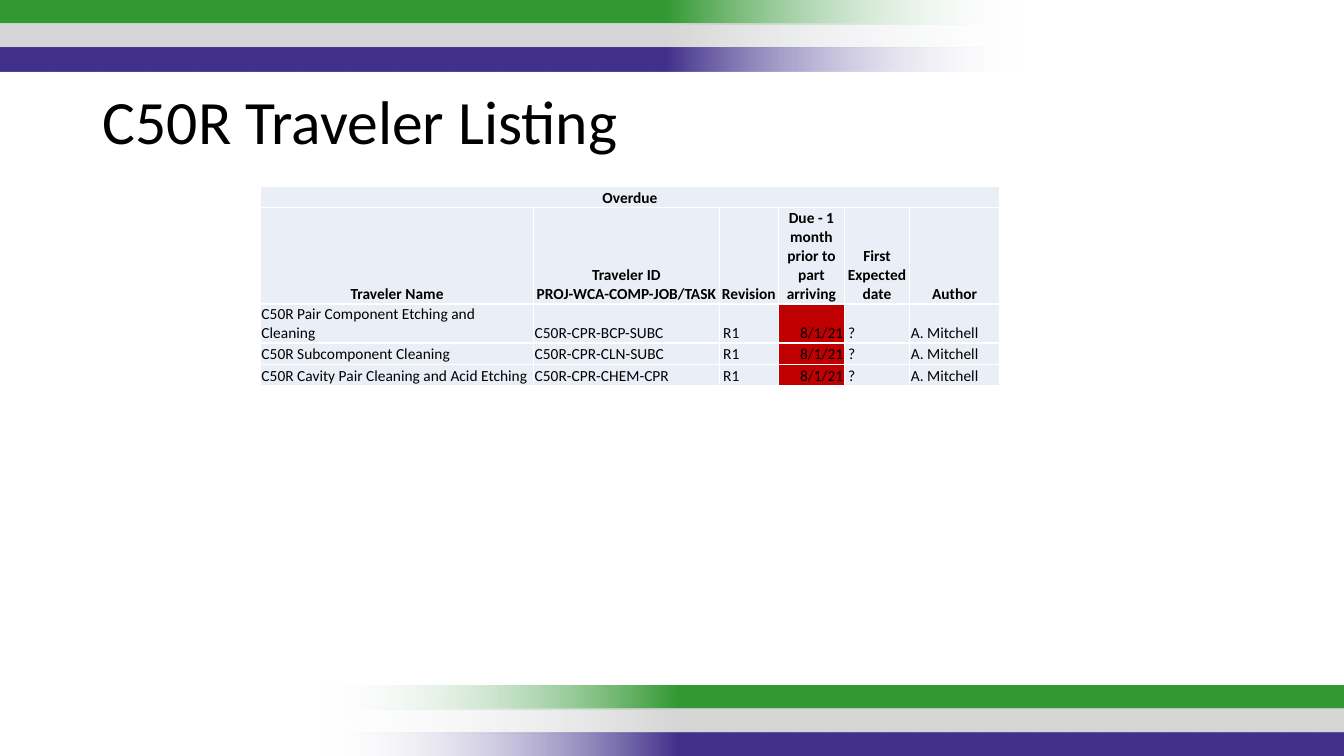
from lxml import etree
from pptx import Presentation
from pptx import util as u
from pptx.dml.color import RGBColor
from pptx.enum import shapes, text
from pptx.oxml import ns

GREEN = RGBColor(0x33, 0x99, 0x33)
GRAY = RGBColor(0xD6, 0xD6, 0xD6)
PURPLE = RGBColor(0x42, 0x31, 0x8C)
PALE = RGBColor(0xF7, 0xFA, 0xFD)
BAND = RGBColor(0xEA, 0xEF, 0xF7)
RED = RGBColor(0xC0, 0x00, 0x00)
WHITE = RGBColor(0xFF, 0xFF, 0xFF)
BLACK = RGBColor(0x00, 0x00, 0x00)

LEFT, MID, RIGHT = text.PP_ALIGN.LEFT, text.PP_ALIGN.CENTER, text.PP_ALIGN.RIGHT
WIDTHS = [20.33, 13.8, 4.43, 4.88, 4.88, 6.68]
ALIGNS = [LEFT, LEFT, LEFT, RIGHT, LEFT, LEFT]
INSETS = [0.01, 0.01, 0.04, 0.01, 0.04, 0.01]
DUE = 3
HEADS = ["Traveler Name", "Traveler ID\vPROJ-WCA-COMP-JOB/TASK", "Revision",
         "Due - 1 month prior to part arriving", "First Expected date", "Author"]
JOBS = [("C50R Pair Component Etching and Cleaning", "C50R-CPR-BCP-SUBC"),
        ("C50R Subcomponent Cleaning", "C50R-CPR-CLN-SUBC"),
        ("C50R Cavity Pair Cleaning and Acid Etching", "C50R-CPR-CHEM-CPR")]


def write(frame, words, size=11, bold=False, align=LEFT, space=None):
    """Put formatted words in the first paragraph of a text frame."""
    para = frame.paragraphs[0]
    para.text = words
    para.alignment = align
    para.line_spacing = space
    for run in para.runs:
        font = run.font
        font.name, font.size, font.bold = "Calibri", u.Pt(size), bold
        font.color.rgb = BLACK


class Deck:
    """Hold the deck and its slide, with lengths in percent of the slide."""

    def __init__(self, wide, high):
        """Open a deck of the given size in inches."""
        self.deck = Presentation()
        self.deck.slide_width = self.wide = u.Inches(wide)
        self.deck.slide_height = self.high = u.Inches(high)
        self.slide = self.deck.slides.add_slide(self.deck.slide_layouts[5])

    def across(self, share):
        """Turn a share of the width into a length."""
        return int(self.wide * share / 100)

    def down(self, share):
        """Turn a share of the height into a length."""
        return int(self.high * share / 100)

    def box(self, left, top, width, height):
        """Turn four shares into a placed box."""
        return self.across(left), self.down(top), self.across(width), self.down(height)

    def title(self, words, *area):
        """Move and fill the title placeholder."""
        shape = self.slide.shapes.title
        shape.left, shape.top, shape.width, shape.height = self.box(*area)
        shape.text_frame.vertical_anchor = text.MSO_ANCHOR.TOP
        write(shape.text_frame, words, size=44, space=0.9)

    def stripe(self, color, turn, *area):
        """Draw a bar that fades out at one end."""
        bar = self.slide.shapes.add_shape(shapes.MSO_SHAPE.RECTANGLE, *self.box(*area))
        bar.shadow.inherit = False
        bar.line.fill.background()
        bar.rotation = turn
        bar.fill.gradient()
        bar.fill.gradient_angle = 0
        for stop, spot, tone in zip(bar.fill.gradient_stops, (0, 0.35), (PALE, color)):
            stop.position = spot
            stop.color.rgb = tone
        faded = bar.fill._xPr.find(".//" + ns.qn("a:srgbClr"))
        etree.SubElement(faded, ns.qn("a:alpha"), val="0")

    def stripes(self, left, top, turn):
        """Stack the three bars of a page edge."""
        for row, color in enumerate((GREEN, GRAY, PURPLE)):
            self.stripe(color, turn, left, top + 3.13 * row, 76.3, 3.2)

    def edge(self, cell):
        """Give a cell thin white borders."""
        props = cell._tc.get_or_add_tcPr()
        for spot, side in enumerate(("lnL", "lnR", "lnT", "lnB")):
            line = etree.Element(ns.qn("a:" + side), w=str(u.Pt(1)))
            fill = etree.SubElement(line, ns.qn("a:solidFill"))
            etree.SubElement(fill, ns.qn("a:srgbClr"), val=str(WHITE))
            props.insert(spot, line)

    def cell(self, cell, words, fill=BAND, inset=0.01, **style):
        """Fill and style one table cell."""
        cell.fill.solid()
        cell.fill.fore_color.rgb = fill
        self.edge(cell)
        cell.margin_left = u.Inches(inset)
        cell.margin_top = cell.margin_right = u.Inches(0.01)
        cell.margin_bottom = 0
        cell.vertical_anchor = text.MSO_ANCHOR.BOTTOM
        write(cell.text_frame, words, **style)

    def table(self, left, top, rise):
        """Build the listing of overdue travelers."""
        rows = len(JOBS) + 2
        area = self.box(left, top, sum(WIDTHS), rise * rows)
        grid = self.slide.shapes.add_table(rows, len(WIDTHS), *area).table
        grid.first_row = grid.horz_banding = False
        for col, width in zip(grid.columns, WIDTHS):
            col.width = self.across(width)
        for row in grid.rows:
            row.height = self.down(rise)
        grid.cell(0, 0).merge(grid.cell(0, len(WIDTHS) - 1))
        for col, head in enumerate(HEADS):
            self.cell(grid.cell(0, col), "" if col else "Overdue", bold=True, align=MID)
            self.cell(grid.cell(1, col), head, bold=True, align=MID)
        for row, job in enumerate(JOBS, 2):
            for col, words in enumerate((*job, "R1", "8/1/21", "?", "A. Mitchell")):
                self.cell(grid.cell(row, col), words, fill=RED if col == DUE else BAND,
                          inset=INSETS[col], align=ALIGNS[col])


def main():
    """Build and save the slide."""
    page = Deck(13.33, 7.5)
    page.stripes(-0.1, 0, 180)
    page.stripes(23.8, 90.67, 0)
    page.title("C50R Traveler Listing", 6.9, 11.47, 86.25, 13.2)
    page.table(19.38, 24.7, 2.8)
    page.deck.save("out.pptx")


if __name__ == "__main__":
    main()
